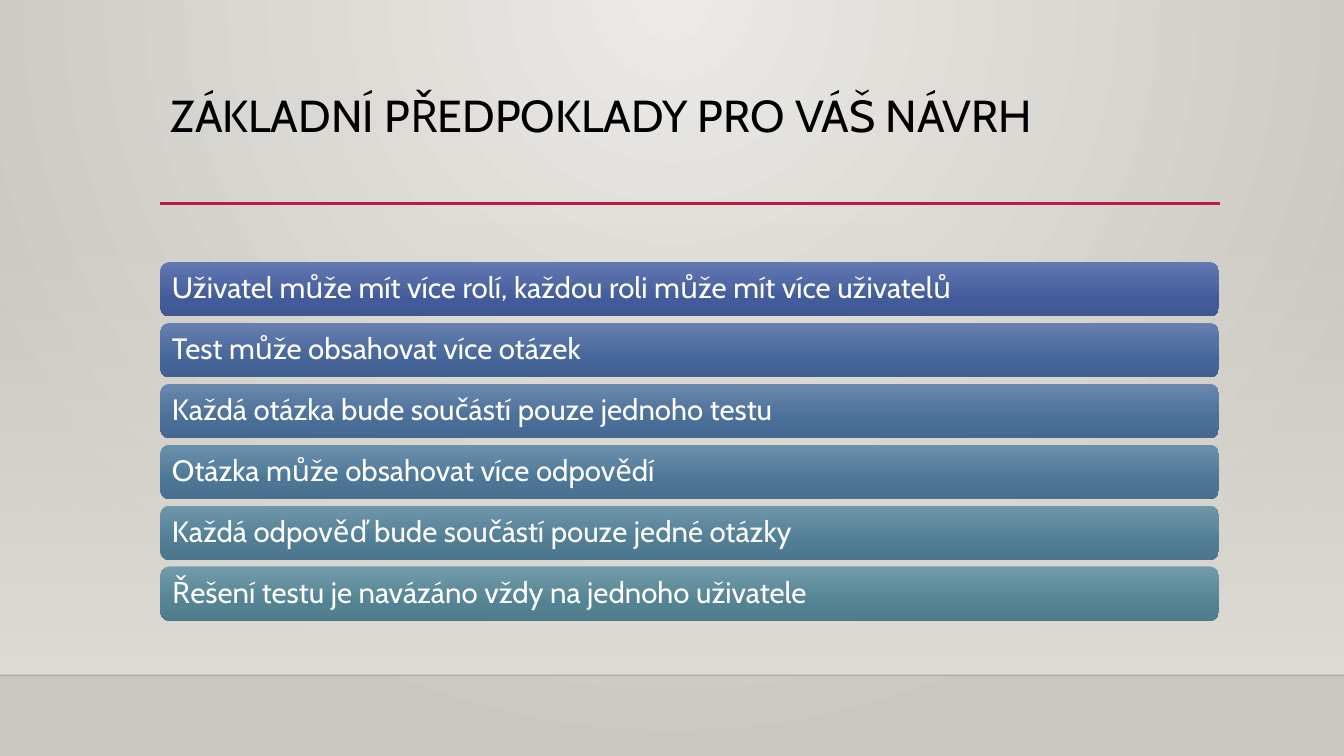
from dataclasses import dataclass

from lxml import etree
from pptx import Presentation
from pptx.dml.color import RGBColor
from pptx.enum.shapes import MSO_CONNECTOR, MSO_SHAPE
from pptx.enum.text import MSO_ANCHOR, MSO_AUTO_SIZE, PP_ALIGN
from pptx.oxml.ns import qn
from pptx.util import Inches, Pt

STRAIGHT = MSO_CONNECTOR.STRAIGHT
RECT, ROUND = MSO_SHAPE.RECTANGLE, MSO_SHAPE.ROUNDED_RECTANGLE
TOP, MIDDLE = MSO_ANCHOR.TOP, MSO_ANCHOR.MIDDLE
LEFT, NO_FIT = PP_ALIGN.LEFT, MSO_AUTO_SIZE.NONE

FONT = "Cabin"
COLORS = {
    "title": "000000", "text": "FFFFFF", "rule": "B71E42", "edge": "000001",
    "glow": "ECEAE7", "wall": "CAC7C1", "panel": "DFDBD5",
}
WIDE, HIGH = 13.33, 7.5
SIDE, SPAN = 1.59, 10.5
FIRST, PITCH, TALL = 2.6, 0.604, 0.54


@dataclass
class Stop:
    place: int
    color: str
    alpha: int = 100


@dataclass
class Bar:
    text: str
    light: str
    mid: str
    dark: str


@dataclass
class Rule:
    start: float
    end: float
    top: float
    color: str
    width: float
    alpha: int = 100


BARS = [
    Bar("Uživatel může mít více rolí, každou roli může mít více uživatelů", "6378B0", "425B9B", "3F5793"),
    Bar("Test může obsahovat více otázek", "6680AF", "466599", "426091"),
    Bar("Každá otázka bude součástí pouze jednoho testu", "6988AD", "496E98", "456890"),
    Bar("Otázka může obsahovat více odpovědí", "6C90AC", "4C7696", "49708E"),
    Bar("Každá odpověď bude součástí pouze jedné otázky", "6F96AB", "507D94", "4C768D"),
    Bar("Řešení testu je navázáno vždy na jednoho uživatele", "729BA9", "538393", "4F7C8B"),
]
RULES = [
    Rule(0, WIDE, 6.7, COLORS["edge"], 1, 20),
    Rule(SIDE, 12.1, 2.02, COLORS["rule"], 2.5),
]


def fade(node, alpha: int) -> None:
    if alpha < 100:
        etree.SubElement(node, qn("a:alpha"), val=str(alpha * 1000))


def blend(fill, root, stops: list[Stop], round_glow: bool = False) -> None:
    fill.background()
    blank = root.find(".//" + qn("a:noFill"))
    grad = etree.Element(qn("a:gradFill"), rotWithShape="1")
    items = etree.SubElement(grad, qn("a:gsLst"))
    for stop in stops:
        item = etree.SubElement(items, qn("a:gs"), pos=str(stop.place * 1000))
        fade(etree.SubElement(item, qn("a:srgbClr"), val=stop.color), stop.alpha)
    if round_glow:
        shade = etree.SubElement(grad, qn("a:path"), {"path": "circle"})
        etree.SubElement(shade, qn("a:fillToRect"), l="43000", t="0", r="43000", b="100000")
    else:
        etree.SubElement(grad, qn("a:lin"), ang="5400000", scaled="0")
    blank.getparent().replace(blank, grad)


def add_box(slide, kind, left: float, top: float, width: float, height: float, stops: list[Stop]):
    box = slide.shapes.add_shape(kind, Inches(left), Inches(top), Inches(width), Inches(height))
    box.shadow.inherit = False
    blend(box.fill, box.element.spPr, stops)
    box.line.fill.background()
    return box


def add_rule(slide, rule: Rule) -> None:
    top = Inches(rule.top)
    line = slide.shapes.add_connector(STRAIGHT, Inches(rule.start), top, Inches(rule.end), top)
    line.line.color.rgb = RGBColor.from_string(rule.color)
    line.line.width = Pt(rule.width)
    fade(line.element.spPr.find(".//" + qn("a:srgbClr")), rule.alpha)
    etree.SubElement(line.element.spPr, qn("a:effectLst"))


def set_text(frame, text: str, size: int, color: str, anchor) -> None:
    frame.text = text
    frame.word_wrap = True
    frame.auto_size = NO_FIT
    frame.vertical_anchor = anchor
    line = frame.paragraphs[0]
    line.alignment = LEFT
    line.line_spacing = 0.9
    font = line.runs[0].font
    font.name, font.size = FONT, Pt(size)
    font.color.rgb = RGBColor.from_string(color)


def add_bar(slide, bar: Bar, top: float) -> None:
    stops = [Stop(0, bar.light), Stop(69, bar.mid), Stop(100, bar.dark)]
    box = add_box(slide, ROUND, SIDE, top, SPAN, TALL, stops)
    frame = box.text_frame
    frame.margin_left = frame.margin_right = Inches(0.09)
    frame.margin_top = frame.margin_bottom = Inches(0.06)
    set_text(frame, bar.text, 21, COLORS["text"], MIDDLE)


def set_title(slide, text: str) -> None:
    title = slide.shapes.title
    title.left, title.top = Inches(SIDE), Inches(0.88)
    title.width, title.height = Inches(SPAN), Inches(1.15)
    set_text(title.text_frame, text, 32, COLORS["title"], TOP)


def main() -> None:
    deck = Presentation()
    deck.slide_width, deck.slide_height = Inches(WIDE), Inches(HIGH)
    slide = deck.slides.add_slide(deck.slide_layouts[5])
    glow = [Stop(0, COLORS["glow"]), Stop(100, COLORS["wall"])]
    blend(slide.background.fill, slide.element, glow, round_glow=True)
    veil = [Stop(0, COLORS["panel"], 0), Stop(100, COLORS["panel"])]
    add_box(slide, RECT, 0, 2.21, WIDE, 4.49, veil)
    for rule in RULES:
        add_rule(slide, rule)
    set_title(slide, "ZÁKLADNÍ PŘEDPOKLADY PRO VÁŠ NÁVRH")
    for row, bar in enumerate(BARS):
        add_bar(slide, bar, FIRST + row * PITCH)
    deck.save("out.pptx")


if __name__ == "__main__":
    main()
